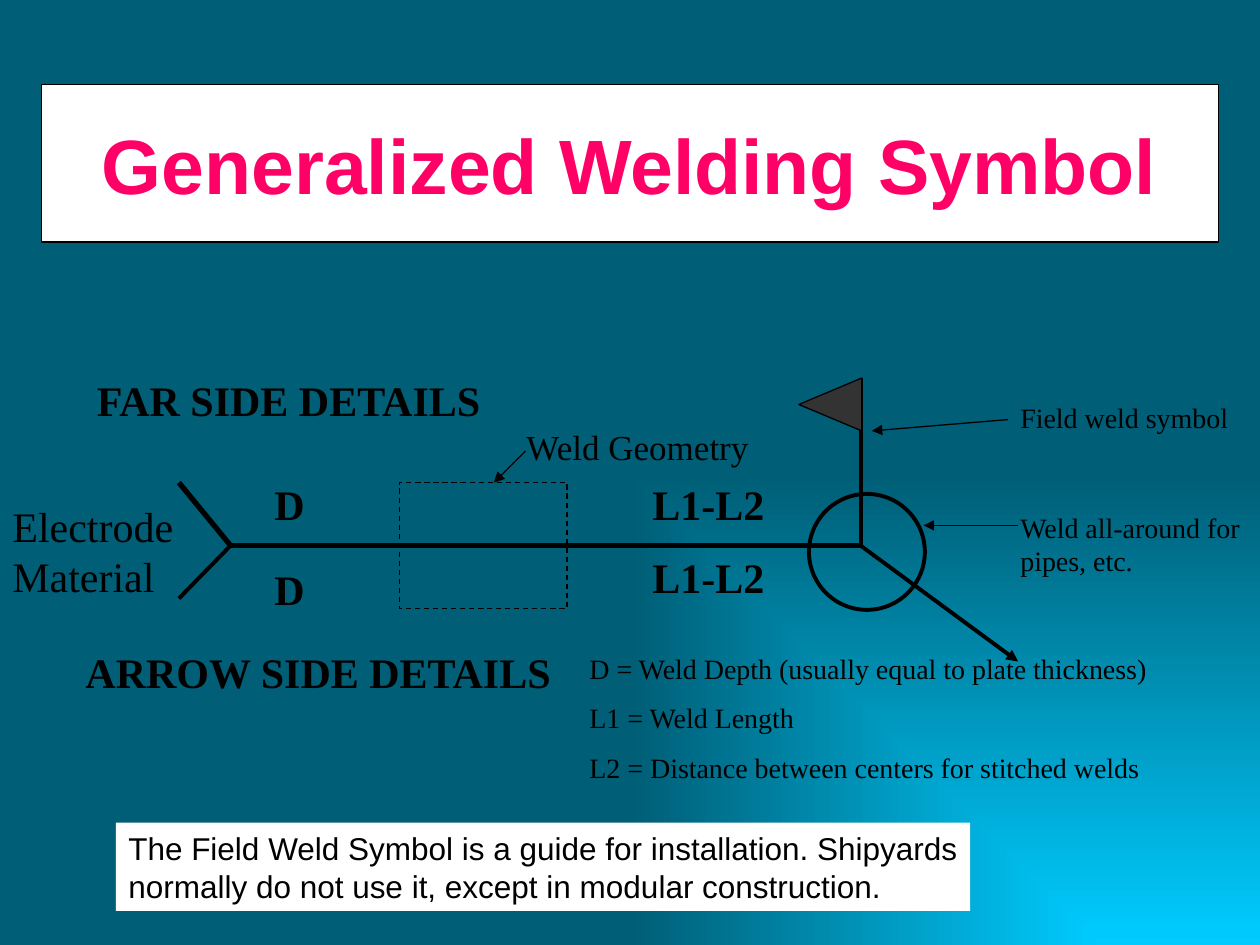
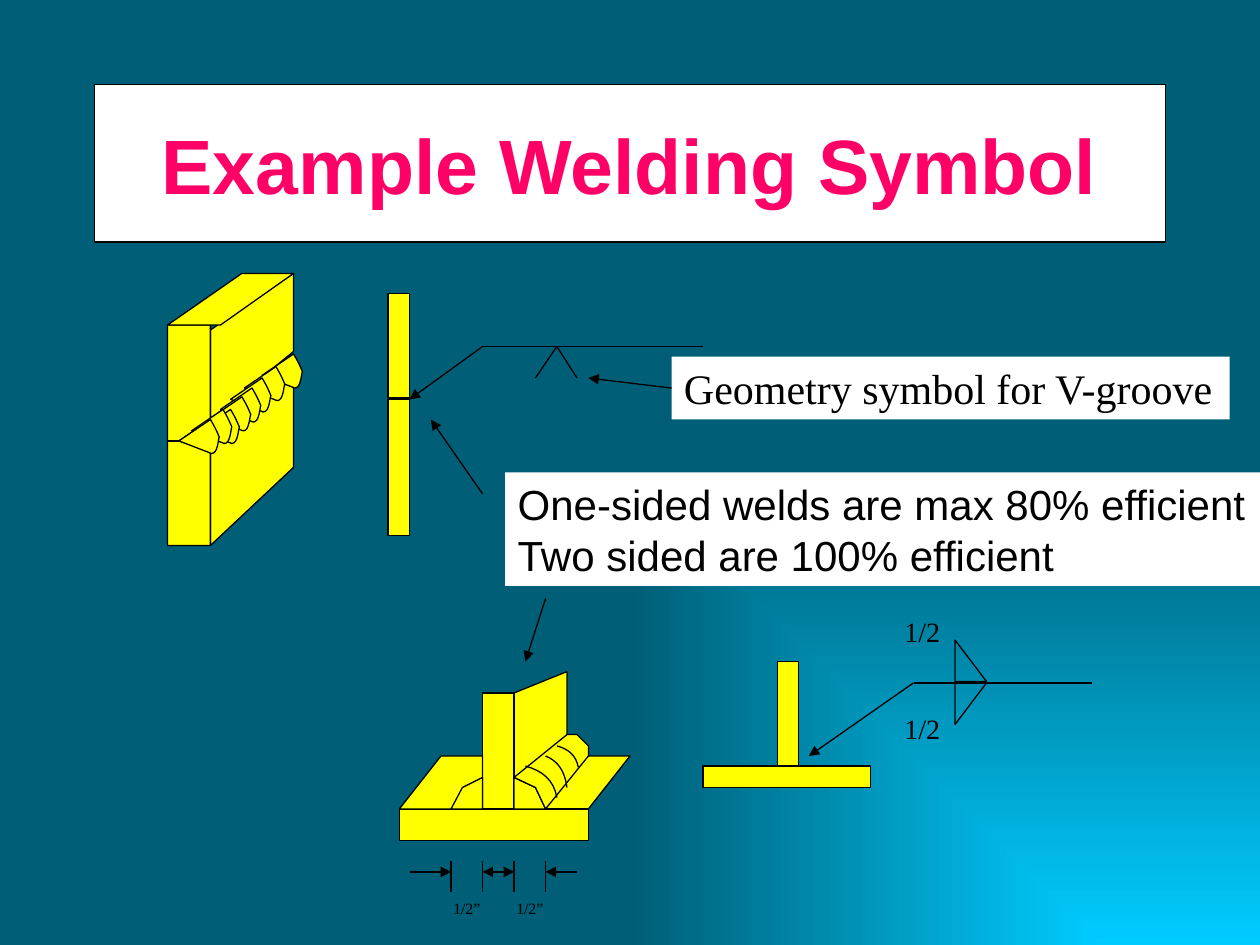
from dataclasses import dataclass

from lxml import etree
from pptx import Presentation
from pptx.dml.color import RGBColor
from pptx.enum.dml import MSO_LINE
from pptx.enum.shapes import MSO_CONNECTOR, MSO_SHAPE
from pptx.enum.text import MSO_ANCHOR, PP_ALIGN
from pptx.oxml.ns import qn
from pptx.util import Inches, Pt

RECTANGLE = MSO_SHAPE.RECTANGLE
OVAL = MSO_SHAPE.OVAL
TRIANGLE = MSO_SHAPE.ISOSCELES_TRIANGLE
RIGHT_TRIANGLE = MSO_SHAPE.RIGHT_TRIANGLE
STRAIGHT = MSO_CONNECTOR.STRAIGHT
DASH = MSO_LINE.DASH
MIDDLE = MSO_ANCHOR.MIDDLE
TOP = MSO_ANCHOR.TOP
LEFT = PP_ALIGN.LEFT
CENTER = PP_ALIGN.CENTER

COLORS = {
    "glow": "00CCFF",
    "deep": "005E76",
    "title": "FF0066",
    "panel": "FFFFFF",
    "ink": "000000",
    "flag": "333333",
    "steel": "FFFF00",
}
SANS, SERIF = "Arial", "Times New Roman"
THIN, MEDIUM, THICK = 0.75, 2.25, 3


def color(name):
    """Return the named palette colour."""
    return RGBColor.from_string(COLORS[name])


def bezier(start, first, second, end, steps=8):
    """Return points along a cubic curve, without its start."""
    points = []
    for step in range(1, steps + 1):
        t = step / steps
        weights = ((1 - t) ** 3, 3 * t * (1 - t) ** 2, 3 * t * t * (1 - t), t ** 3)
        points.append(tuple(
            sum(weight * point[axis] for weight, point in zip(weights, (start, first, second, end)))
            for axis in (0, 1)))
    return points


@dataclass
class Region:
    """A part of a page whose contents are placed from its own corner."""

    page: object
    left: float
    top: float

    def spot(self, point):
        """Return the page position of a local point."""
        return Inches(self.left + point[0]), Inches(self.top + point[1])

    def paint(self, shape, fill, weight=THIN):
        """Give a shape its fill and outline."""
        shape.shadow.inherit = False
        if fill:
            shape.fill.solid()
            shape.fill.fore_color.rgb = color(fill)
        else:
            shape.fill.background()
        shape.line.color.rgb = color("ink")
        shape.line.width = Pt(weight)
        return shape

    def shape(self, kind, left, top, width, height, fill=None, weight=THIN):
        """Add a preset shape."""
        shape = self.page.shapes.add_shape(
            kind, *self.spot((left, top)), Inches(width), Inches(height))
        return self.paint(shape, fill, weight)

    def outline(self, points, fill="steel", closed=True):
        """Add a freeform through local points."""
        start, *others = [self.spot(point) for point in points]
        builder = self.page.shapes.build_freeform(*start)
        builder.add_line_segments(others, close=closed)
        return self.paint(builder.convert_to_shape(), fill)

    def line(self, start, end, weight=THIN, heads=()):
        """Add a straight line with optional arrowheads."""
        connector = self.page.shapes.add_connector(STRAIGHT, *self.spot(start), *self.spot(end))
        connector.line.color.rgb = color("ink")
        connector.line.width = Pt(weight)
        properties = connector.element.spPr
        for head in heads:
            etree.SubElement(properties.find(qn("a:ln")), qn(f"a:{head}"), type="triangle")
        etree.SubElement(properties, qn("a:effectLst"))
        return connector

    def arrow(self, start, end, weight=THIN):
        """Add a line with an arrowhead at its end."""
        return self.line(start, end, weight, ["tailEnd"])

    def text(self, lines, left, top, width, height, size, font=SERIF, bold=False,
             wrap=True, fill=None, gap=0, inset=0.05, align=LEFT):
        """Add a text box with one paragraph a line."""
        box = self.page.shapes.add_textbox(
            *self.spot((left, top)), Inches(width), Inches(height))
        if fill:
            box.fill.solid()
            box.fill.fore_color.rgb = color(fill)
        frame = box.text_frame
        frame.word_wrap = wrap
        frame.vertical_anchor = TOP
        frame.margin_top = frame.margin_bottom = Inches(inset)
        frame.text = "\n".join(lines)
        for index, para in enumerate(frame.paragraphs):
            para.alignment = align
            para.space_before = Pt(gap if index else 0)
            para.font.name = font
            para.font.size = Pt(size)
            para.font.bold = bold
            para.font.color.rgb = color("ink")
        return box


def set_background(deck):
    """Give every page the gradient that glows from the lower right corner."""
    master = deck.slide_master
    fill = master.background.fill
    fill.gradient()
    for stop, name in zip(fill.gradient_stops, ("glow", "deep")):
        stop.color.rgb = color(name)
    gradient = master.element.find(".//" + qn("p:bgPr")).find(qn("a:gradFill"))
    gradient.remove(gradient.find(qn("a:lin")))
    route = etree.SubElement(gradient, qn("a:path"), {"path": "rect"})
    etree.SubElement(route, qn("a:fillToRect"), l="100000", t="100000")


def add_page(deck, title, margin):
    """Add a page with its title panel."""
    page = deck.slides.add_slide(deck.slide_layouts[6])
    panel = Region(page, margin, 0.67).shape(RECTANGLE, 0, 0, 10 - 2 * margin, 1.25, "panel")
    frame = panel.text_frame
    frame.word_wrap = True
    frame.vertical_anchor = MIDDLE
    frame.text = title
    para = frame.paragraphs[0]
    para.alignment = CENTER
    para.font.name = SANS
    para.font.size = Pt(44)
    para.font.bold = True
    para.font.color.rgb = color("title")
    return page


def draw_general_symbol(region):
    """Draw the general symbol with its field labels."""
    fork, corner = (1.83, 1.33), (6.83, 1.33)
    region.line(fork, corner, THICK)
    region.arrow(corner, (8.08, 2.25), MEDIUM)
    region.shape(OVAL, 6.42, 0.92, 0.92, 0.92, weight=MEDIUM)
    region.line(corner, (6.83, 0), MEDIUM)
    region.shape(TRIANGLE, 6.38, -0.04, 0.42, 0.5, "flag").rotation = 270
    region.line(fork, (1.42, 0.83), THICK)
    region.line(fork, (1.42, 1.75), MEDIUM)
    region.shape(RECTANGLE, 3.17, 0.83, 1.33, 1).line.dash_style = DASH
    for label, left, top, width in (
        ("FAR SIDE DETAILS", 0.67, -0.08, 3.33),
        ("ARROW SIDE DETAILS", 0.58, 2.08, 4),
        ("L1-L2", 5.08, 0.75, 1.17),
        ("L1-L2", 5.08, 1.33, 1.17),
        ("D", 2.08, 0.75, 1.17),
        ("D", 2.08, 1.42, 1.17),
    ):
        region.text([label], left, top, width, 0.5, 24, bold=True)
    region.text(["Electrode", "Material"], 0, 0.92, 1.48, 0.9, 24, wrap=False)
    region.text(["Weld Geometry"], 4.08, 0.33, 1.98, 0.43, 20, wrap=False)
    region.arrow((4.17, 0.58), (3.92, 0.83))


def draw_callouts(region):
    """Explain the flag and the circle."""
    region.arrow((1.08, 0.33), (0, 0.42))
    region.text(["Field weld symbol"], 1.08, 0.13, 2, 0.37, 16)
    region.arrow((1.16, 1.17), (0.41, 1.17))
    region.text(["Weld all-around for pipes, etc."], 1.08, 1, 2, 0.64, 16)


def draw_legend(region):
    """List what the letters stand for."""
    region.text([
        "D = Weld Depth (usually equal to plate thickness)",
        "L1 = Weld Length",
        "L2 = Distance between centers for stitched welds",
    ], 0, 0, 5, 1.07, 16, gap=9, inset=0)


def draw_field_note(region):
    """Add the note on the field weld symbol."""
    region.text([
        "The Field Weld Symbol is a guide for installation. Shipyards",
        "normally do not use it, except in modular construction.",
    ], 0, 0, 6.78, 0.7, 18, SANS, wrap=False, fill="panel")


def draw_groove_plates(region):
    """Draw two plates joined by a row of weld beads."""
    for face in (
        [(0.34, 1.16), (0.34, 0.45), (1, 0), (1, 0.62)],
        [(0.34, 2.16), (0.34, 1.36), (1, 0.83), (1, 1.54)],
        [(0.34, 0.41), (0.34, 1.16), (0.09, 1.33), (0.34, 1.41),
         (0.34, 2.16), (0, 2.16), (0, 0.41)],
        [(0, 0.41), (0.59, 0), (1, 0), (0.42, 0.41)],
    ):
        region.outline(face)
    shoulder, tip, heel = (0.25, -0.17), (0.32, -0.03), (0.26, 0.1)
    bead = [(0, 0), shoulder,
            *bezier(shoulder, (0.28, -0.12), (0.3, -0.08), tip),
            *bezier(tip, (0.31, -0.01), (0.31, 0.1), heel)]
    for left, top in ((0.75, 0.81), (0.61, 0.91), (0.5, 1), (0.42, 1.08),
                      (0.34, 1.15), (0.25, 1.25), (0.19, 1.25), (0.09, 1.33)):
        region.outline([(left + x, top + y) for x, y in bead])
    region.line((0.09, 1.33), (0, 1.33))


def draw_groove_symbol(region):
    """Draw the edge view of the plates with the V-groove symbol."""
    region.shape(RECTANGLE, 0, 0, 0.17, 0.83, "steel")
    region.shape(RECTANGLE, 0, 0.84, 0.17, 1.08, "steel")
    region.line((2.5, 0.42), (0.75, 0.42))
    region.arrow((0.75, 0.42), (0.17, 0.84))
    region.outline([(1.17, 0.67), (1.34, 0.42), (1.5, 0.67)], None, closed=False)


def draw_groove_label(region):
    """Name the V-groove symbol and point to it."""
    label = region.text(["Geometry symbol for V-groove"], 0, 0, 4.43, 0.5, 24,
                        wrap=False, fill="panel")
    region.arrow((0, 0.25), (-0.66, 0.17)).begin_connect(label, 1)


def draw_tee_joint(region):
    """Draw the tee joint with a fillet weld on each side."""
    region.outline([(0.91, 1.09), (1.33, 0.67), (1.33, 0), (0.91, 0.17)])
    region.outline([(0.91, 1.09), (1.33, 0.67), (1.83, 0.67), (1.5, 1.09)])
    region.shape(RECTANGLE, 0.66, 0.17, 0.25, 0.92, "steel")
    region.shape(RECTANGLE, 0, 1.09, 1.5, 0.25, "steel")
    for face in (
        [(0, 1.09), (0.33, 0.67), (0.66, 0.67), (0.66, 1.09)],
        [(0.91, 1.09), (1.16, 1.09), (1.08, 0.92), (0.91, 0.84)],
        [(1.16, 1.09), (1.5, 0.67), (1.5, 0.59), (1.41, 0.5),
         (1.33, 0.5), (0.91, 0.84), (1.08, 0.92)],
        [(0.66, 1.09), (0.41, 1.09), (0.5, 0.92), (0.66, 0.84)],
    ):
        region.outline(face)
    ripple = [(0, 0), *bezier((0, 0), (0.55, 0.15), (0.9, 0.45), (1, 1))]
    for left, top, width, height in (
        (1, 0.75, 0.25, 0.25), (1.25, 0.59, 0.17, 0.17), (1.16, 0.67, 0.17, 0.25),
    ):
        region.outline([(left + x * width, top + y * height) for x, y in ripple],
                       None, closed=False)


def draw_dimensions(region):
    """Draw the dimension marks below the tee joint."""
    first, step, height = 0.33, 0.25, 0.09
    ticks = [first + step * index for index in range(4)]
    for tick in ticks:
        region.line((tick, 0), (tick, 0.25))
    region.arrow((0, height), (ticks[0], height))
    region.arrow((ticks[3] + step, height), (ticks[3], height))
    region.line((ticks[1], height), (ticks[2], height), heads=["headEnd", "tailEnd"])
    for tick in (ticks[0], ticks[2]):
        region.text(["1/2”"], tick - step / 2, 0.25, 2 * step, 0.25, 9, align=CENTER)


def draw_tee_symbol(region):
    """Draw the end view of the tee with the double fillet symbol."""
    region.shape(RECTANGLE, 0.59, 0, 0.17, 0.83, "steel")
    region.shape(RECTANGLE, 0, 0.83, 1.33, 0.17, "steel")
    region.line((3.09, 0.17), (1.67, 0.17))
    region.arrow((1.67, 0.17), (0.84, 0.75))
    region.shape(RIGHT_TRIANGLE, 2, -0.17, 0.25, 0.33)
    lower = region.shape(RIGHT_TRIANGLE, 2, 0.17, 0.25, 0.33)
    lower.element.spPr.xfrm.set("flipV", "1")
    region.text(["1/2", "1/2"], 1.5, -0.42, 0.58, 1.17, 16, gap=36)


def draw_efficiency_note(region):
    """Add the efficiency note and its arrows to both joints."""
    region.text(["One-sided welds are max 80% efficient", "Two sided are 100% efficient"],
                0, 0, 5.99, 0.9, 24, SANS, wrap=False, fill="panel")
    region.arrow((-0.18, 0.17), (-0.59, -0.42))
    region.arrow((0.32, 1), (0.16, 1.5))


def main():
    """Build and save the deck."""
    deck = Presentation()
    deck.slide_width, deck.slide_height = Inches(10), Inches(7.5)
    set_background(deck)

    general = add_page(deck, "Generalized Welding Symbol", 0.33)
    draw_general_symbol(Region(general, 0, 3))
    draw_callouts(Region(general, 6.92, 3))
    draw_legend(Region(general, 4.58, 5.17))
    draw_field_note(Region(general, 0.92, 6.53))

    example = add_page(deck, "Example Welding Symbol", 0.75)
    draw_groove_plates(Region(example, 1.33, 2.17))
    draw_groove_symbol(Region(example, 3.08, 2.33))
    draw_tee_joint(Region(example, 3.17, 5.33))
    draw_dimensions(Region(example, 3.25, 6.83))
    draw_tee_symbol(Region(example, 5.58, 5.25))
    draw_efficiency_note(Region(example, 4.01, 3.75))
    draw_groove_label(Region(example, 5.33, 2.83))
    deck.save("out.pptx")


if __name__ == "__main__":
    main()
